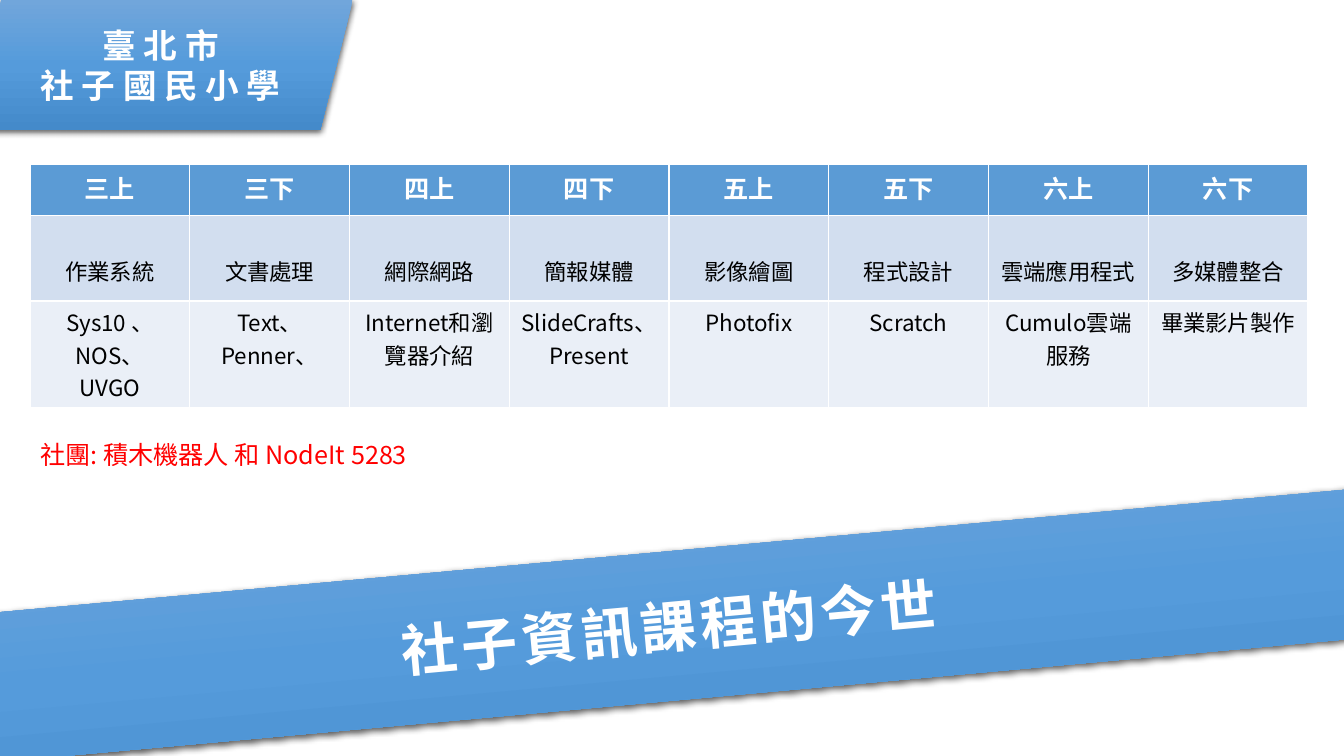
from lxml import etree
from pptx import Presentation
from pptx.dml.color import RGBColor
from pptx.enum.shapes import MSO_SHAPE as Preset
from pptx.enum.text import MSO_ANCHOR as Anchor, PP_ALIGN as Align
from pptx.oxml import parse_xml
from pptx.oxml.ns import nsdecls, qn
from pptx.util import Pt

FONT = "Noto Sans CJK SC"
WHITE = RGBColor(0xFF, 0xFF, 0xFF)
BLACK = RGBColor(0, 0, 0)
RED = RGBColor(0xFF, 0, 0)
HEADER_BLUE = RGBColor(0x5B, 0x9B, 0xD5)
TOPIC_BLUE = RGBColor(0xD2, 0xDE, 0xEF)
TOOL_BLUE = RGBColor(0xEA, 0xEF, 0xF7)
GRADIENT = [(0, RGBColor(0x71, 0xA6, 0xDB)),
            (50, RGBColor(0x55, 0x9B, 0xDB)),
            (100, RGBColor(0x44, 0x8A, 0xCA))]

COURSES = [
    ("三上", "作業系統", "Sys10 、NOS、\nUVGO"),
    ("三下", "文書處理", "Text、Penner、"),
    ("四上", "網際網路", "Internet和瀏覽器介紹"),
    ("四下", "簡報媒體", "SlideCrafts、\nPresent"),
    ("五上", "影像繪圖", "Photofix"),
    ("五下", "程式設計", "Scratch"),
    ("六上", "雲端應用程式", "Cumulo雲端服務"),
    ("六下", "多媒體整合", "畢業影片製作"),
]
# height, fill, text colour, size, bold
ROWS = [
    (36.5, HEADER_BLUE, WHITE, 18, True),
    (61, TOPIC_BLUE, BLACK, 16, False),
    (71, TOOL_BLUE, BLACK, 16, False),
]


def write(text_frame, text, size, color, bold=False, align=Align.CENTER):
    """Fill a text frame and format every run, East Asian font included."""
    text_frame.text = text
    text_frame.word_wrap = True
    for paragraph in text_frame.paragraphs:
        paragraph.alignment = align
        for run in paragraph.runs:
            run.font.size = Pt(size)
            run.font.bold = bold
            run.font.color.rgb = color
            run.font.name = FONT
            properties = run.font._element
            etree.SubElement(properties, qn("a:ea")).set("typeface", FONT)


def add_banner(preset, left, top, width, height, text, size):
    """Add a blue gradient shape with a soft shadow below it."""
    shape = slide.shapes.add_shape(preset, Pt(left), Pt(top), Pt(width), Pt(height))
    shape.line.fill.background()
    stops = "".join(f'<a:gs pos="{position * 1000}"><a:srgbClr val="{color}"/></a:gs>'
                    for position, color in GRADIENT)
    properties = shape._element.spPr
    properties.find(qn("a:ln")).addprevious(parse_xml(
        f'<a:gradFill {nsdecls("a")} rotWithShape="1"><a:gsLst>{stops}</a:gsLst>'
        '<a:lin ang="5400000" scaled="0"/></a:gradFill>'))
    shape.shadow.inherit = False
    properties.find(qn("a:effectLst")).append(parse_xml(
        f'<a:outerShdw {nsdecls("a")} blurRad="{Pt(4.5)}" dist="{Pt(1.5)}" dir="5400000" '
        'algn="ctr" rotWithShape="0"><a:srgbClr val="000000"><a:alpha val="63000"/>'
        '</a:srgbClr></a:outerShdw>'))
    shape.text_frame.vertical_anchor = Anchor.MIDDLE
    write(shape.text_frame, text, size, WHITE, bold=True)
    return shape


presentation = Presentation()
presentation.slide_width = Pt(960)
presentation.slide_height = Pt(540)
slide = presentation.slides.add_slide(presentation.slide_layouts[6])

title_band = add_banner(Preset.RECTANGLE, -19.5, 394, 994.5, 106.5, "社子資訊課程的今世", 40)
title_band.rotation = 354.8
title_band.text_frame.paragraphs[0].runs[0].font._element.set("spc", "300")

add_banner(Preset.PARALLELOGRAM, -22.5, 0, 274.5, 93, "臺 北 市\n社 子 國 民 小 學", 24)

table = slide.shapes.add_table(len(ROWS), len(COURSES), Pt(21.5), Pt(117.5),
                               Pt(912.8), Pt(168.5)).table
for column in table.columns:
    column.width = Pt(114.1)
for row_index, (height, fill, color, size, bold) in enumerate(ROWS):
    table.rows[row_index].height = Pt(height)
    for column_index, course in enumerate(COURSES):
        cell = table.cell(row_index, column_index)
        cell.fill.solid()
        cell.fill.fore_color.rgb = fill
        write(cell.text_frame, course[row_index], size, color, bold)
        if row_index == 1:
            cell.vertical_anchor = Anchor.BOTTOM
            cell.margin_bottom = Pt(10)

club_note = slide.shapes.add_textbox(Pt(21.5), Pt(310.5), Pt(433), Pt(29))
write(club_note.text_frame, "社團: 積木機器人 和 NodeIt 5283", 18, RED, align=Align.LEFT)

presentation.save("out.pptx")
